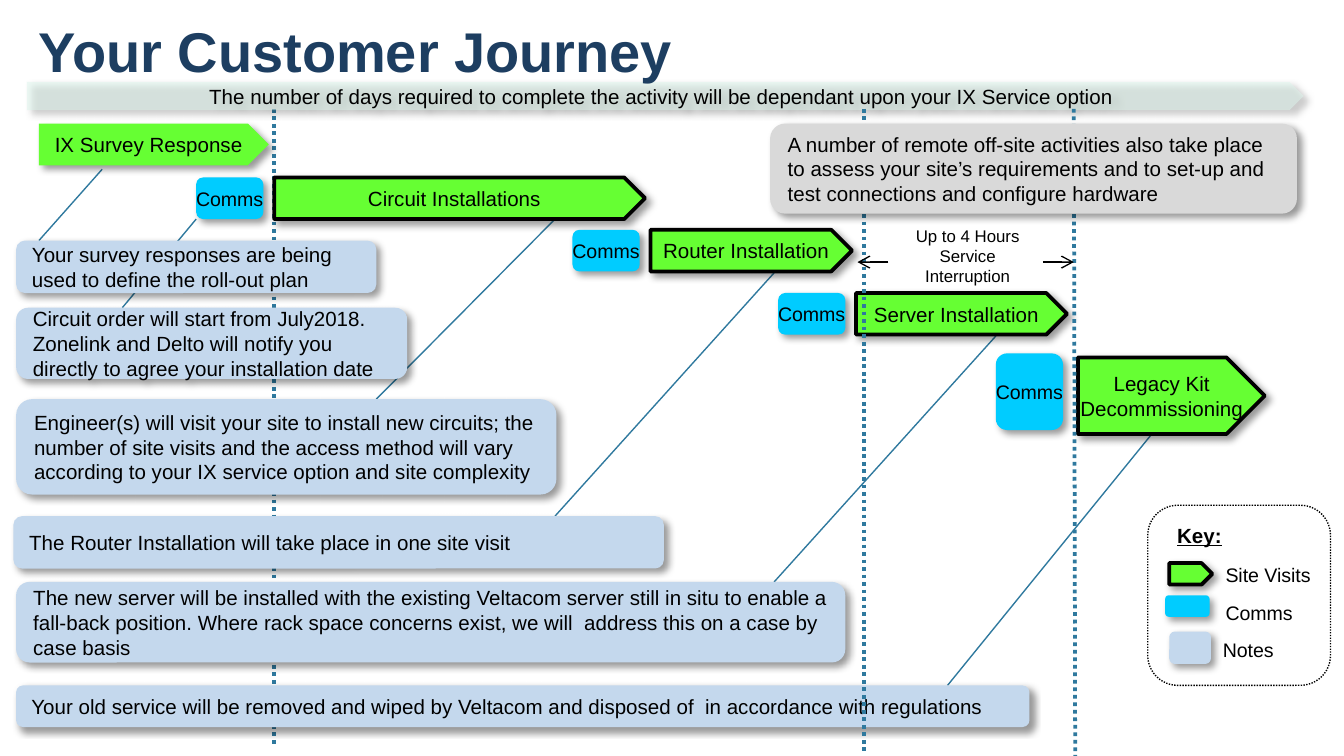
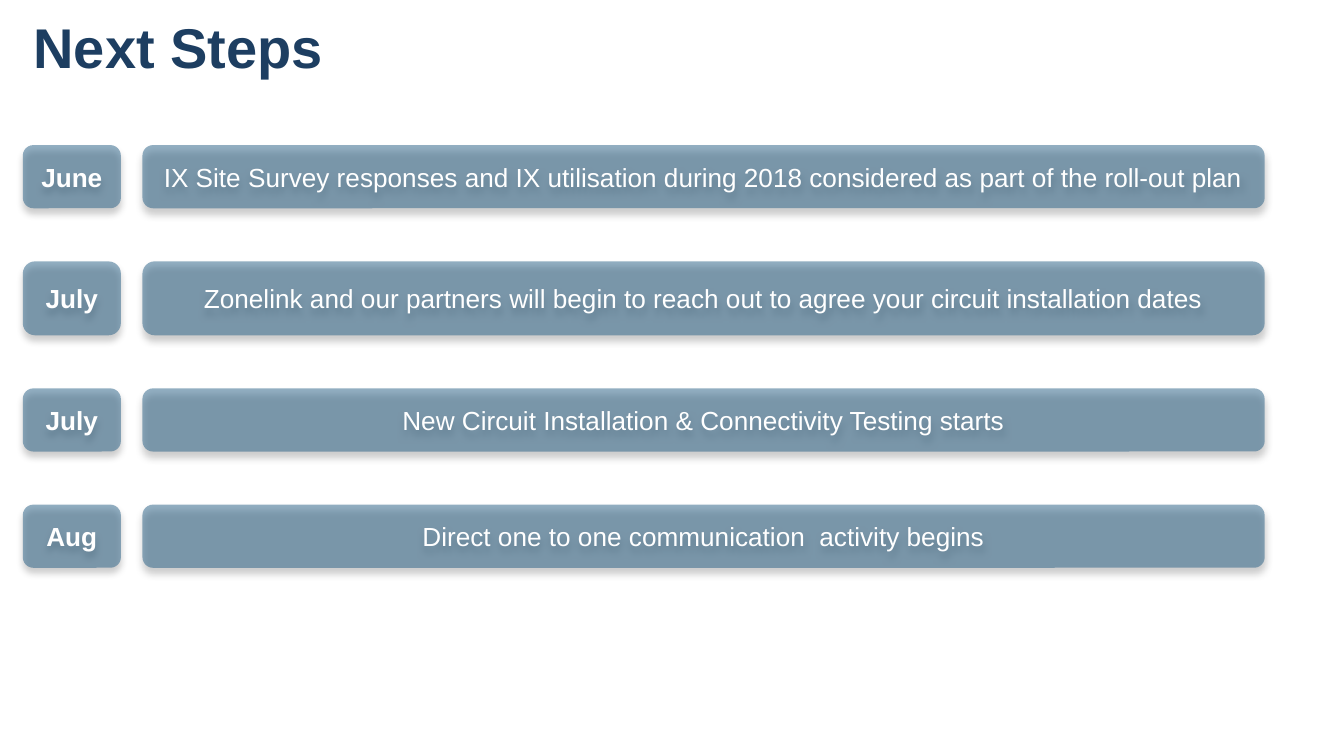
from lxml import etree
from pptx import Presentation
from pptx.dml.color import RGBColor
from pptx.enum.dml import MSO_LINE
from pptx.enum.shapes import MSO_CONNECTOR, MSO_SHAPE
from pptx.enum.text import MSO_ANCHOR, MSO_AUTO_SIZE, PP_ALIGN
from pptx.oxml.ns import qn
from pptx.util import Inches, Pt

ARROW, ROUNDED = MSO_SHAPE.PENTAGON, MSO_SHAPE.ROUNDED_RECTANGLE
STRAIGHT, DOTTED = MSO_CONNECTOR.STRAIGHT, MSO_LINE.ROUND_DOT
LEFT, CENTER = PP_ALIGN.LEFT, PP_ALIGN.CENTER
TOP, MIDDLE = MSO_ANCHOR.TOP, MSO_ANCHOR.MIDDLE
GROW = MSO_AUTO_SIZE.SHAPE_TO_FIT_TEXT

# The grid has square cells: 100 columns by 56.25 rows.
CELL = Inches(0.1)
COLUMNS, ROWS = 100, 56.25
FONT = "Arial"
COLORS = {
    "title": "1D3E61",
    "text": "000000",
    "white": "FFFFFF",
    "visit": "66FF33",
    "comms": "00CCFF",
    "note": "C4D8ED",
    "remote": "D9D9D9",
    "band": "DDF5EC",
    "step": "286187",
    "guide": "2F799E",
}

# Each entry: left, top, width, height, text
VISITS = [
    (20.4, 13.2, 27.6, 3.1, "Circuit Installations"),
    (48.4, 17.1, 15, 3.1, "Router Installation"),
    (63.7, 21.8, 15.7, 3.1, "Server Installation"),
    (80.2, 26.6, 13.9, 5.7, "Legacy Kit\nDecommissioning"),
]
COMMS = [(14.6, 13.2, 3.1), (42.6, 17.1, 3.1), (57.9, 21.8, 3.1), (74.1, 26.3, 5.7)]
NOTES = [
    (1.2, 17.9, 26.8, 3.9,
     "Your survey responses are being used to define the roll-out plan"),
    (1.2, 22.9, 29.1, 5.3,
     "Circuit order will start from July2018. Zonelink and Delto will notify you "
     "directly to agree your installation date"),
    (1.2, 29.7, 40.2, 7.1,
     "Engineer(s) will visit your site to install new circuits; the number of site visits "
     "and the access method will vary according to your IX service option and site complexity"),
    (1, 38.4, 48.4, 3.9, "The Router Installation will take place in one site visit"),
    (1.2, 43.3, 61.7, 6,
     "The new server will be installed with the existing Veltacom server still in situ to "
     "enable a fall-back position. Where rack space concerns exist, we will  address this "
     "on a case by case basis"),
    (1.2, 51, 75.4, 3.1,
     "Your old service will be removed and wiped by Veltacom and disposed of  "
     "in accordance with regulations"),
]
LEADERS = [
    (7.6, 12.6, 2.9, 17.9),
    (14.6, 16.3, 9.1, 22.9),
    (41.3, 16.3, 28, 29.7),
    (57.6, 20.3, 41.3, 38.4),
    (74.1, 25, 57.6, 43.3),
    (85.7, 32.3, 70.5, 51),
]
STEPS = [
    ("June", 4.7,
     "IX Site Survey responses and IX utilisation during 2018 considered "
     "as part of the roll-out plan"),
    ("July", 5.5,
     "Zonelink and our partners will begin to reach out to agree your "
     "circuit installation dates"),
    ("July", 4.7, "New Circuit Installation & Connectivity Testing starts"),
    ("Aug", 4.7, "Direct one to one communication  activity begins"),
]


def cells(*values):
    return [round(value * CELL) for value in values]


def color(name):
    return RGBColor.from_string(COLORS[name])


def apply(target, values):
    for name, value in values.items():
        setattr(target, name, value)


def write(box, text, size=11, ink="text", align=LEFT, frame=None, **font):
    apply(box.text_frame, {"word_wrap": True, **(frame or {})})
    for index, line in enumerate(text.split("\n")):
        para = box.text_frame.paragraphs[0] if index == 0 else box.text_frame.add_paragraph()
        para.alignment = align
        span = para.add_run()
        span.text = line
        apply(span.font, {"name": FONT, "size": Pt(size), **font})
        span.font.color.rgb = color(ink)


def add_label(slide, area, text, **style):
    box = slide.shapes.add_textbox(*cells(*area))
    frame = {"vertical_anchor": TOP, "auto_size": GROW, **style.pop("frame", {})}
    write(box, text, frame=frame, **style)


def add_title(slide, area, text):
    box = slide.shapes.add_textbox(*cells(*area))
    margins = {f"margin_{side}": 0 for side in ("left", "top", "right", "bottom")}
    write(box, text, size=30, ink="title", bold=True,
          frame={"vertical_anchor": MIDDLE, **margins})


def add_shadow(shape, angle):
    effects = shape._element.spPr.find(qn("a:effectLst"))
    shadow = etree.SubElement(effects, qn("a:outerShdw"), blurRad=str(Pt(4)), dist=str(Pt(3)),
                              dir=str(angle * 60000), algn="tl", rotWithShape="0")
    tint = etree.SubElement(shadow, qn("a:srgbClr"), val=COLORS["text"])
    etree.SubElement(tint, qn("a:alpha"), val="40000")


def add_block(slide, kind, area, fill, outline=0, alpha=100, angle=45):
    """Add a filled shape with a soft shadow; outline is a width in points."""
    shape = slide.shapes.add_shape(kind, *cells(*area))
    shape.shadow.inherit = False
    add_shadow(shape, angle)
    shape.fill.solid()
    shape.fill.fore_color.rgb = color(fill)
    if alpha < 100:
        tint = shape._element.spPr.find(f"{qn('a:solidFill')}/{qn('a:srgbClr')}")
        etree.SubElement(tint, qn("a:alpha"), val=str(alpha * 1000))
    if outline:
        shape.line.color.rgb = color("text")
        shape.line.width = Pt(outline)
    else:
        shape.line.fill.background()
    return shape


def caption(shape, text, **style):
    """Write one centred, unwrapped text in a shape."""
    write(shape, text, align=CENTER,
          frame={"word_wrap": False, "vertical_anchor": MIDDLE}, **style)


def add_note(slide, area, text, fill="note"):
    write(add_block(slide, ROUNDED, area, fill), text, frame={"vertical_anchor": MIDDLE})


def add_line(slide, ends, ink="guide", width=0.75, dash=None, tail=None):
    line = slide.shapes.add_connector(STRAIGHT, *cells(*ends))
    line.line.color.rgb = color(ink)
    apply(line.line, {"width": Pt(width), "dash_style": dash})
    if tail:
        etree.SubElement(line.line._get_or_add_ln(), qn("a:tailEnd"), type=tail)
    etree.SubElement(line._element.spPr, qn("a:effectLst"))


def add_milestone(slide, column, end_column, bottom):
    add_line(slide, (column, 8.1, end_column, bottom), width=2, dash=DOTTED)


def add_key(slide):
    frame = slide.shapes.add_shape(ROUNDED, *cells(85.4, 37.6, 13.6, 13.4))
    frame.shadow.inherit = False
    frame.fill.background()
    frame.line.color.rgb = color("text")
    apply(frame.line, {"width": Pt(0.75), "dash_style": DOTTED})
    unwrapped = {"word_wrap": False}
    add_label(slide, (86.6, 38.4, 5.4, 2.9), "Key:", bold=True, underline=True, frame=unwrapped)
    entries = [
        (ARROW, (87, 41.9, 3.2, 1.6), "visit", 2, (90.2, 41.4, 8.8, 2.9), "Site Visits"),
        (ROUNDED, (86.7, 44.3, 3.3, 1.6), "comms", 0, (90.2, 44.2, 7.1, 2.8), "Comms"),
        (ROUNDED, (87, 47, 3.1, 2.4), "note", 0, (90, 47, 5.9, 2.8), "Notes"),
    ]
    for kind, swatch, fill, outline, label, text in entries:
        add_block(slide, kind, swatch, fill, outline)
        add_label(slide, label, text, size=10.5, frame=unwrapped)


def build_journey(slide):
    add_milestone(slide, 20.4, 20.4, 55.6)
    for ends in LEADERS:
        add_line(slide, ends)

    band = add_block(slide, ARROW, (2, 6.1, 95, 2.1), "band", alpha=50)
    caption(band, "The number of days required to complete the activity will be "
                  "dependant upon your IX Service option")
    add_title(slide, (2.9, 0, 95, 7.4), "Your Customer Journey")

    survey = add_block(slide, ARROW, (2.9, 9.2, 17.1, 3.1), "visit")
    caption(survey, "IX Survey Response")
    for *area, text in VISITS:
        caption(add_block(slide, ARROW, area, "visit", outline=2), text)
    for left, top, height in COMMS:
        caption(add_block(slide, ROUNDED, (left, top, 5, height), "comms"), "Comms", size=10.5)
    for *area, text in NOTES:
        add_note(slide, area, text)

    add_milestone(slide, 79.9, 80, ROWS)
    add_milestone(slide, 64.3, 64.3, 55.9)
    add_label(slide, (66.5, 16.3, 11, 5.6), "Up to 4 Hours Service Interruption",
              size=9, align=CENTER)
    for start, end in ((66.1, 63.8), (77.6, 79.9)):
        add_line(slide, (start, 19.5, end, 19.5), ink="text", tail="arrow")
    add_note(slide, (57.3, 9.2, 39.2, 6.7),
             "A number of remote off-site activities also take place to assess your site’s "
             "requirements and to set-up and test connections and configure hardware", "remote")
    add_key(slide)


def build_next_steps(slide):
    add_title(slide, (2.5, -0.5, 95, 7.9), "Next Steps")
    top, gap = 10.8, 3.95
    for month, height, text in STEPS:
        for left, width, words, bold in ((1.7, 7.3, month, True), (10.6, 83.5, text, False)):
            step = add_block(slide, ROUNDED, (left, top, width, height), "step",
                             alpha=50, angle=90)
            caption(step, words, size=14, ink="white", bold=bold)
        top += height + gap


def main():
    deck = Presentation()
    deck.slide_width, deck.slide_height = cells(COLUMNS, ROWS)
    blank = deck.slide_layouts[6]
    for build in (build_journey, build_next_steps):
        build(deck.slides.add_slide(blank))
    deck.save("out.pptx")


if __name__ == "__main__":
    main()
